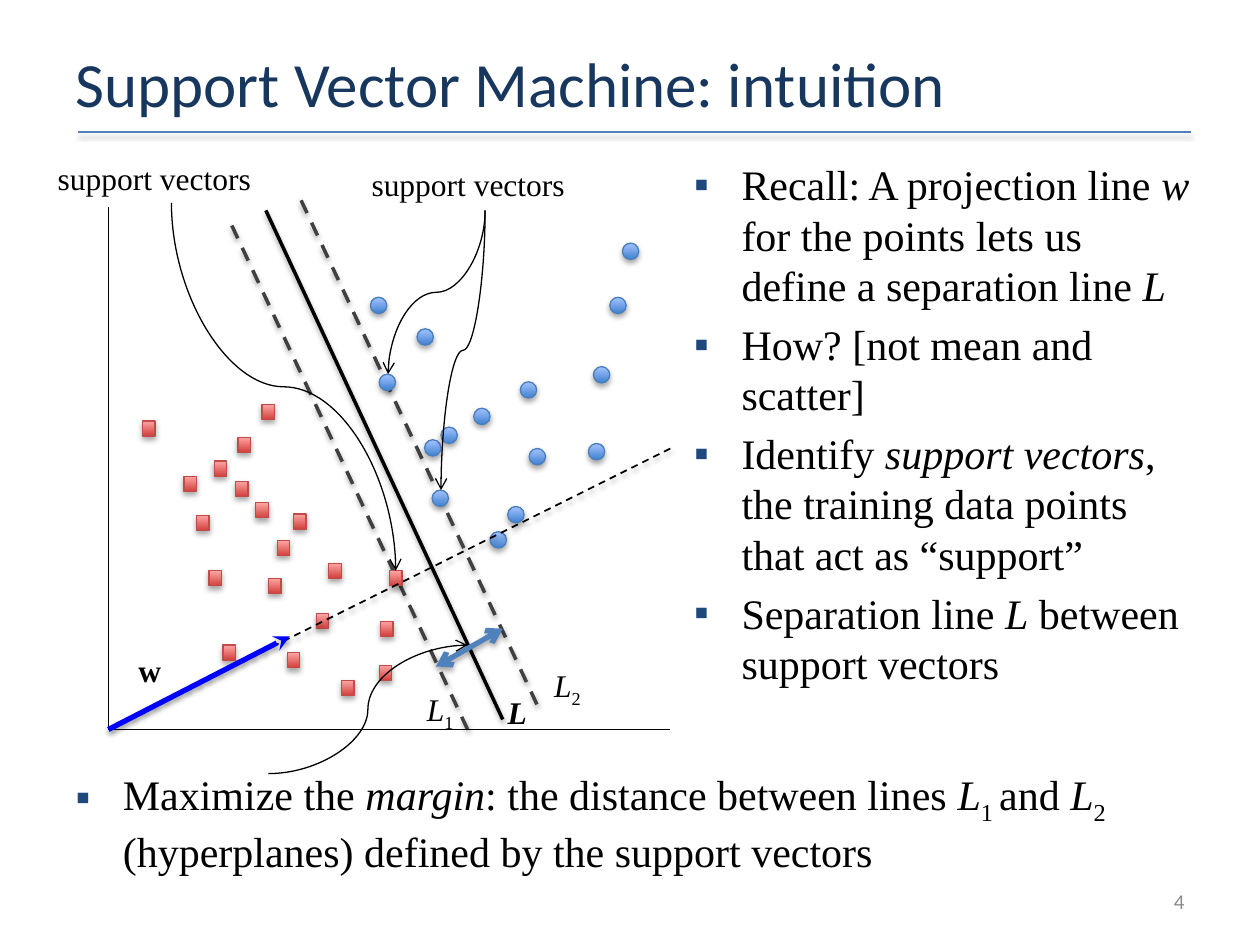
from lxml.etree import SubElement
from pptx import Presentation
from pptx.dml.color import RGBColor
from pptx.enum.dml import MSO_LINE
from pptx.enum.shapes import MSO_CONNECTOR, MSO_SHAPE
from pptx.enum.text import MSO_ANCHOR, MSO_AUTO_SIZE, PP_ALIGN
from pptx.oxml.ns import qn
from pptx.util import Inches, Pt

COLORS = {
    "title": "17375E", "rule": "4F81BD", "text": "000000", "number": "8C8C8C",
    "bullet": "1F497D", "margin": "404040", "w": "0000FF",
    "circle": "4B7EBC", "circle dark": "3F80CE", "circle light": "A4C4FF",
    "square": "BF4C48", "square dark": "D1403C", "square light": "FFA6A5",
}
SERIF = "Times New Roman"

prs = Presentation()
prs.slide_width, prs.slide_height = Inches(10), Inches(7.5)
cell = prs.slide_width // 10  # the grid has 10 columns and 7.5 rows
slide = prs.slides.add_slide(prs.slide_layouts[3])
title, intuition, margin_note = slide.placeholders


def write(shape, box, paragraphs, size, color="text", font=SERIF, bulleted=False):
    """Place a shape and fill it; each paragraph is a list of (text, style).

    A style holds any of the letters b (bold), i (italic), s (subscript).
    """
    shape.left, shape.top, shape.width, shape.height = [round(v * cell) for v in box]
    frame = shape.text_frame
    frame.word_wrap = True
    frame.auto_size = MSO_AUTO_SIZE.NONE
    for index, pieces in enumerate(paragraphs):
        paragraph = frame.add_paragraph() if index else frame.paragraphs[0]
        for text, style in pieces:
            run = paragraph.add_run()
            run.text = text
            run.font.size, run.font.name = Pt(size), font
            run.font.bold, run.font.italic = "b" in style, "i" in style
            run.font.color.rgb = RGBColor.from_string(COLORS[color])
            if "s" in style:
                run._r.get_or_add_rPr().set("baseline", "-25000")
        if bulleted:
            properties = paragraph._p.get_or_add_pPr()
            tint = SubElement(properties, qn("a:buClr"))
            SubElement(tint, qn("a:srgbClr"), val=COLORS["bullet"])
            SubElement(properties, qn("a:buChar"), char="▪")
    return frame


def finish(shape, color, width, shadow=True, dash=None, head=None, tail=None):
    """Style a shape's line, its arrowheads and its shadow."""
    shape.line.color.rgb = RGBColor.from_string(COLORS[color])
    shape.line.width = Pt(width)
    if dash:
        shape.line.dash_style = dash
    properties = shape._element.spPr
    for tag, arrow in (("a:headEnd", head), ("a:tailEnd", tail)):
        if arrow:
            SubElement(properties.find(qn("a:ln")), qn(tag), type=arrow)
    effects = SubElement(properties, qn("a:effectLst"))
    if shadow:
        outer = SubElement(effects, qn("a:outerShdw"), blurRad="40000", dist="23000",
                           dir="5400000", rotWithShape="0")
        black = SubElement(outer, qn("a:srgbClr"), val="000000")
        SubElement(black, qn("a:alpha"), val="35000")


# Title, slide number and body text
heading = write(title, (0.5, 0.3, 9, 0.71),
                [[("Support Vector Machine: intuition", "")]], 36, "title", "Calibri")
heading.vertical_anchor = MSO_ANCHOR.MIDDLE
heading.paragraphs[0].alignment = PP_ALIGN.LEFT

number = write(slide.shapes.add_textbox(0, 0, cell, cell), (7.17, 6.95, 2.33, 0.4),
               [[("4", "")]], 12, "number", "Calibri")
number.vertical_anchor = MSO_ANCHOR.MIDDLE
number.paragraphs[0].alignment = PP_ALIGN.RIGHT

write(intuition, (5.41, 1.21, 4.14, 4.85), [
    [("Recall: A projection line ", ""), ("w ", "i"),
     ("for the points lets us define a separation line ", ""), ("L", "i")],
    [("How? [not mean and scatter]", "")],
    [("Identify ", ""), ("support vectors", "i"),
     (", the training data points that act as “support”", "")],
    [("Separation line ", ""), ("L", "i"), (" between support vectors", "")],
], 24, bulleted=True)
write(margin_note, (0.5, 6.05, 9, 1.03), [
    [("Maximize the ", ""), ("margin", "i"), (": the distance between lines ", ""),
     ("L", "i"), ("1 ", "s"), ("and ", ""), ("L", "i"), ("2", "s"),
     (" (hyperplanes) defined by the support vectors", "")],
], 24, bulleted=True)

# Title rule, margin lines and axes lie behind the points; the others in front
back_lines = [
    ((0.62, 1.05, 9.45, 1.05), "rule", 1, {}),
    ((2.39, 1.59, 4.28, 5.63), "margin", 2, {"dash": MSO_LINE.DASH}),
    ((1.84, 1.79, 3.73, 5.83), "margin", 2, {"dash": MSO_LINE.DASH}),
    ((0.86, 1.64, 0.86, 5.79), "text", 0.75, {"shadow": False}),
    ((5.32, 5.79, 0.86, 5.79), "text", 0.75, {"shadow": False}),
]
front_lines = [
    ((5.32, 3.56, 0.84, 5.79), "text", 1, {"dash": MSO_LINE.DASH}),
    ((2.11, 1.67, 3.99, 5.71), "text", 2, {}),
    ((2.3, 5.05, 0.86, 5.79), "w", 3, {"head": "stealth"}),
    ((3.46, 5.29, 3.99, 4.99), "rule", 3, {"head": "arrow", "tail": "arrow"}),
]
circles = [
    (3.37, 3.49), (3.5, 3.39), (3.76, 3.24), (3.43, 3.89), (3.89, 4.22),
    (3.31, 2.61), (3.01, 2.97), (4.2, 3.56), (4.03, 4.02), (4.67, 3.52),
    (2.94, 2.36), (4.13, 3.03), (4.94, 1.93), (4.84, 2.36), (4.71, 2.91),
]
squares = [
    (1.7, 3.66), (1.87, 3.82), (2.03, 3.99), (2.2, 4.29), (1.56, 4.09),
    (1.89, 3.47), (1.46, 3.78), (1.66, 4.53), (2.13, 4.59), (2.33, 4.08),
    (1.77, 5.12), (2.61, 4.47), (1.13, 3.34), (3.09, 4.53), (2.51, 4.87),
    (2.28, 5.18), (3.02, 4.93), (2.71, 5.4), (3.01, 5.28), (2.08, 3.21),
]
point_classes = [
    ("circle", MSO_SHAPE.OVAL, 0.13, 0.13, circles),
    ("square", MSO_SHAPE.RECTANGLE, 0.1, 0.12, squares),
]

for layer in (back_lines, front_lines):
    for ends, color, width, options in layer:
        line = slide.shapes.add_connector(
            MSO_CONNECTOR.STRAIGHT, *[round(v * cell) for v in ends])
        finish(line, color, width, **options)
    if layer is front_lines:
        break
    for kind, preset, width, height, corners in point_classes:
        for left, top in corners:
            point = slide.shapes.add_shape(
                preset, *[round(v * cell) for v in (left, top, width, height)])
            point.fill.gradient()
            point.fill.gradient_angle = 90
            for stop, shade in zip(point.fill.gradient_stops, ("dark", "light")):
                stop.color.rgb = RGBColor.from_string(COLORS[f"{kind} {shade}"])
            finish(point, kind, 0.75)

# Labels in the plot
labels = [
    (1, 5.12, 0.45, [("w", "b")]),
    (3.93, 5.45, 0.45, [("L", "bi")]),
    (2.85, 1.26, 1.99, [("support vectors", "")]),
    (0.36, 1.21, 1.99, [("support vectors", "")]),
    (4.3, 5.24, 0.45, [("L", "i"), ("2", "s")]),
    (3.29, 5.43, 0.45, [("L", "i"), ("1", "s")]),
]
for left, top, width, pieces in labels:
    write(slide.shapes.add_textbox(0, 0, cell, cell), (left, top, width, 0.4), [pieces], 18)

# Curved pointers: those that leave downwards are turned by a quarter
pointers = [
    (3.85, 1.67, 3.08, 2.97, True),
    (3.85, 1.67, 3.5, 3.89, True),
    (1.36, 1.61, 3.14, 4.53, True),
    (2.13, 6.14, 3.71, 5.12, False),
]
for x1, y1, x2, y2, downwards in pointers:
    ends = (x1, y1, x2, y2)
    if downwards:
        middle_x, middle_y = (x1 + x2) / 2, (y1 + y2) / 2
        half_height = abs(x2 - x1) / 2
        half_width = (y2 - y1) / 2 * (1 if x2 < x1 else -1)
        ends = (middle_x - half_width, middle_y - half_height,
                middle_x + half_width, middle_y + half_height)
    pointer = slide.shapes.add_connector(
        MSO_CONNECTOR.CURVE, *[round(v * cell) for v in ends])
    if downwards:
        quarter_turns = 1 if x2 < x1 else 3
        pointer._element.spPr.find(qn("a:xfrm")).set("rot", str(quarter_turns * 5400000))
    finish(pointer, "text", 0.75, shadow=False, tail="arrow")

prs.save("out.pptx")
